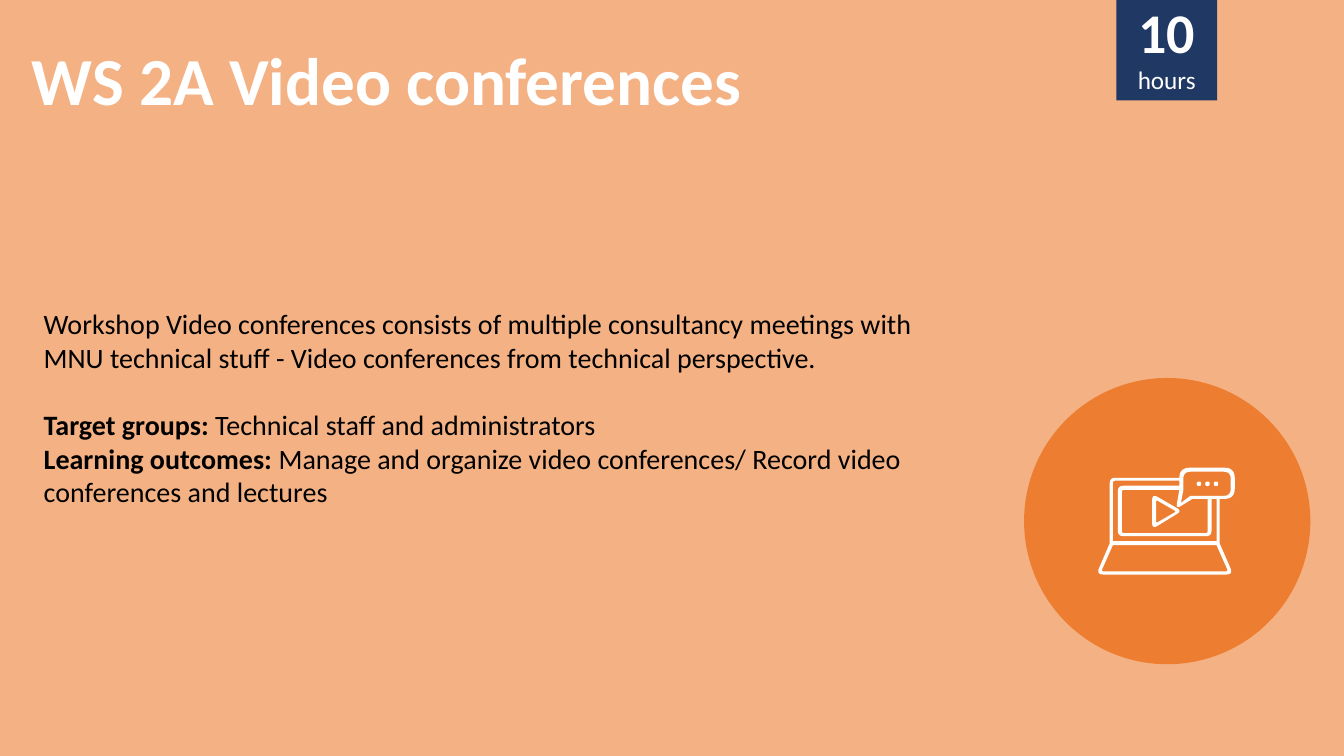
"""Build the video conferences workshop slide."""
from dataclasses import dataclass
from math import dist

from lxml import etree
from pptx import Presentation
from pptx.dml.color import RGBColor
from pptx.enum.shapes import MSO_SHAPE
from pptx.enum.text import MSO_ANCHOR, MSO_AUTO_SIZE, PP_ALIGN
from pptx.oxml.ns import qn
from pptx.util import Pt

RECT, OVAL = MSO_SHAPE.RECTANGLE, MSO_SHAPE.OVAL
TOP, MIDDLE = MSO_ANCHOR.TOP, MSO_ANCHOR.MIDDLE
LEFT, CENTER = PP_ALIGN.LEFT, PP_ALIGN.CENTER
FIXED = MSO_AUTO_SIZE.NONE


@dataclass(frozen=True)
class Theme:
    """Hold the colours and type sizes of the slide."""
    font: str = "Calibri"
    peach: str = "F4B183"
    orange: str = "ED7D31"
    navy: str = "203864"
    white: str = "FFFFFF"
    black: str = "000000"
    title: int = 48
    number: int = 40
    body: int = 20
    label: int = 18


THEME = Theme()

LAPTOP = [(842.4, 334.1, 7.5), (882, 334.1, 7.5), (882, 356.4, 7.5),
          (871.2, 356.4, 0), (871.2, 388.1, 0), (880.9, 410.4, 5),
          (783.1, 410.4, 5), (792.7, 388.1, 0), (792.7, 341.3, 4),
          (842.4, 341.3, 0)]
BASE = [(794.9, 389.5, 0), (786.6, 408.2, 2), (877.3, 408.2, 2),
        (869, 389.5, 0)]
FRAME = [(794.9, 343.4, 2), (842.4, 343.4, 0), (842.4, 347, 0),
         (798.5, 347, 4), (798.5, 383, 4), (865.4, 383, 4),
         (865.4, 356.4, 0), (869, 356.4, 0), (869, 386.6, 0),
         (794.9, 386.6, 0)]
SCREEN = [(801.4, 349.9, 1.5), (842.4, 349.9, 0), (840, 363.6, 4),
          (851.8, 356.4, 0), (862.6, 356.4, 0), (862.6, 380.9, 1.5),
          (801.4, 380.9, 1.5)]
PLAY = [(823, 352.8, 4.5), (844.2, 365, 4), (823, 378, 4.5)]
ARROW = [(825.8, 357.1, 1.5), (840.2, 365.4, 1.5), (825.8, 373.7, 1.5)]
BUBBLE = [(845.3, 337, 5), (871.2 + 7.9, 337, 5), (879.1, 354.2, 5),
          (850.3, 354.2, 0.5), (843.5, 359.3, 0.5), (845.3, 349.9, 0)]


def colour(value):
    """Turn a hex value into a colour."""
    return RGBColor.from_string(value)


def paint(shape, fill):
    """Fill a shape and drop its line and shadow."""
    shape.shadow.inherit = False
    shape.fill.solid()
    shape.fill.fore_color.rgb = colour(fill)
    shape.line.fill.background()


def add_form(slide, kind, box, fill):
    """Add a plain preset shape."""
    shape = slide.shapes.add_shape(kind, *map(Pt, box))
    paint(shape, fill)
    return shape


def add_run(para, text, size, tint, bold=False):
    """Add one run of text."""
    run = para.add_run()
    run.text = text
    font = run.font
    font.name, font.size, font.bold = THEME.font, Pt(size), bold
    font.color.rgb = colour(tint)


def set_frame(shape, anchor):
    """Prepare the text frame of a shape."""
    frame = shape.text_frame
    frame.word_wrap = True
    frame.auto_size = FIXED
    frame.vertical_anchor = anchor
    return frame


def place(shape, box):
    """Move a placeholder."""
    shape.left, shape.top, shape.width, shape.height = map(Pt, box)


def set_para(para, align, before=0):
    """Set a flush paragraph with no bullet."""
    para.alignment = align
    para.space_before, para.space_after = Pt(before), Pt(0)
    props = para._p.get_or_add_pPr()
    props.set("marL", "0")
    props.set("indent", "0")
    etree.SubElement(props, qn("a:buNone"))


def add_title(slide, text):
    """Fill the title."""
    title = slide.shapes.title
    place(title, (15.5, 23.8, 935.3, 65.5))
    para = set_frame(title, TOP).paragraphs[0]
    set_para(para, LEFT)
    add_run(para, text, THEME.title, THEME.white, True)


def add_body(slide, items):
    """Fill the body with rows of gap, bold lead and text."""
    body = slide.placeholders[1]
    place(body, (24, 215.4, 636.5, 169.9))
    frame = set_frame(body, TOP)
    for index, (gap, lead, text) in enumerate(items):
        para = frame.add_paragraph() if index else frame.paragraphs[0]
        set_para(para, LEFT, gap)
        if lead:
            add_run(para, lead, THEME.body, THEME.black, True)
        add_run(para, text, THEME.body, THEME.black)


def add_badge(slide, number, label):
    """Add the badge with the length of the workshop."""
    badge = add_form(slide, RECT, (797.4, -6, 72, 77.8), THEME.navy)
    para = set_frame(badge, MIDDLE).paragraphs[0]
    para.alignment = CENTER
    add_run(para, number, THEME.number, THEME.white, True)
    para.add_line_break()
    add_run(para, label, THEME.label, THEME.white)


def toward(start, end, reach):
    """Find the point at a given reach from start to end."""
    part = reach / dist(start, end)
    return tuple(a + (b - a) * part for a, b in zip(start, end))


def bend(before, corner, after, radius, steps=8):
    """Round one corner with a short curve."""
    first, last = toward(corner, before, radius), toward(corner, after, radius)
    for step in range(steps + 1):
        t = step / steps
        yield tuple((1 - t) ** 2 * a + 2 * t * (1 - t) * b + t * t * c
                    for a, b, c in zip(first, corner, last))


def trace(corners):
    """Turn corners of x, y and radius into outline points."""
    spots = [corner[:2] for corner in corners]
    dots = []
    for i, (x, y, radius) in enumerate(corners):
        after = spots[(i + 1) % len(spots)]
        dots += bend(spots[i - 1], (x, y), after, radius) if radius else [(x, y)]
    return [(Pt(x), Pt(y)) for x, y in dots]


def dot(x, y, half=1.6):
    """Give the corners of a small round dot."""
    return [(x + a * half, y + b * half, half)
            for a, b in ((-1, -1), (1, -1), (1, 1), (-1, 1))]


def add_icon(slide):
    """Draw the laptop with its video and chat bubble."""
    add_form(slide, OVAL, (731.5, 270, 204.5, 204.5), THEME.orange)
    dots = [dot(856.4 + 6.1 * i, 345.6) for i in range(3)]
    first, *rest = map(trace, [LAPTOP, BASE, FRAME, SCREEN, PLAY, ARROW,
                               BUBBLE, *dots])
    maker = slide.shapes.build_freeform(*first[0])
    maker.add_line_segments(first[1:], close=True)
    for loop in rest:
        maker.move_to(*loop[0])
        maker.add_line_segments(loop[1:], close=True)
    paint(maker.convert_to_shape(), THEME.white)


def main():
    """Build and save the slide."""
    deck = Presentation()
    deck.slide_width, deck.slide_height = Pt(960), Pt(540)
    slide = deck.slides.add_slide(deck.slide_layouts[1])
    back = add_form(slide, RECT, (-6.5, -19.5, 973, 559.5), THEME.peach)
    slide.shapes.title.element.addprevious(back.element)
    add_title(slide, "WS 2A Video conferences")
    add_body(slide, [
        (0, "", "Workshop Video conferences consists of multiple consultancy "
         "meetings with MNU technical stuff - Video conferences from "
         "technical perspective."),
        (24, "Target groups:", " Technical staff and administrators"),
        (0, "Learning outcomes: ", "Manage and organize video conferences/ "
         "Record video conferences and lectures"),
    ])
    add_icon(slide)
    add_badge(slide, "10", "hours")
    deck.save("out.pptx")


if __name__ == "__main__":
    main()
